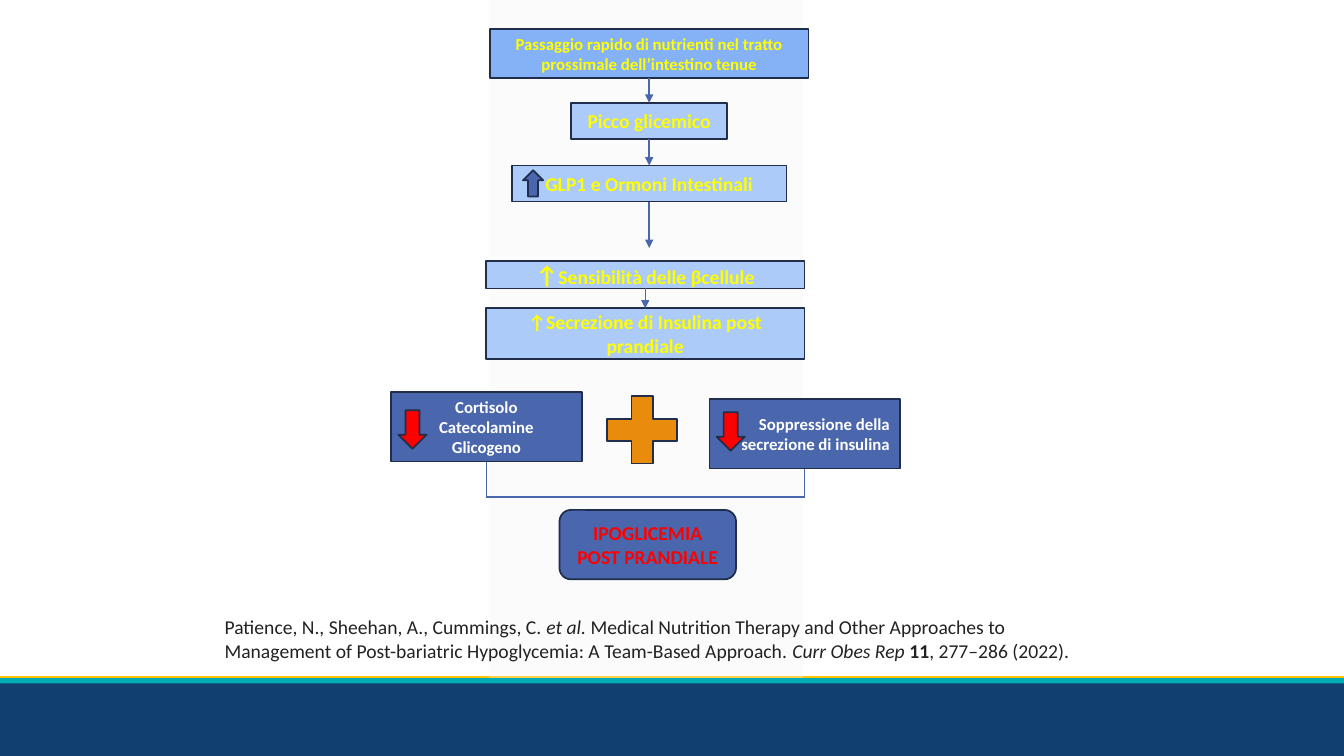
from lxml.etree import SubElement
from pptx import Presentation
from pptx.dml.color import RGBColor
from pptx.enum.shapes import MSO_CONNECTOR, MSO_SHAPE
from pptx.enum.text import MSO_ANCHOR, PP_ALIGN
from pptx.oxml.ns import qn
from pptx.util import Cm, Pt

NAVY = RGBColor(0x11, 0x3F, 0x6F)
TEAL = RGBColor(0x00, 0xAC, 0xB6)
GOLD = RGBColor(0xFF, 0xC0, 0x00)
PALE_GREY = RGBColor(0xF2, 0xF2, 0xF2)
SKY = RGBColor(0x85, 0xB2, 0xF6)
LIGHT_BLUE = RGBColor(0xAC, 0xCB, 0xF9)
BLUE = RGBColor(0x4A, 0x66, 0xAC)
OUTLINE = RGBColor(0x20, 0x2D, 0x4B)
ORANGE = RGBColor(0xE9, 0x8B, 0x0D)
RED = RGBColor(0xFF, 0x00, 0x00)
YELLOW = RGBColor(0xFF, 0xFF, 0x00)
WHITE = RGBColor(0xFF, 0xFF, 0xFF)
INK = RGBColor(0x22, 0x22, 0x22)

FONT = "Calibri"
SLIDE_WIDTH = 33.87
UPPER_CENTRE = 16.36  # axis of the first three steps
LOWER_CENTRE = 16.26  # axis of the insulin steps


def add_figure(page, kind, left, top, width, height, fill, outlined=True):
    figure = page.shapes.add_shape(kind, Cm(left), Cm(top), Cm(width), Cm(height))
    figure.shadow.inherit = False
    figure.fill.solid()
    figure.fill.fore_color.rgb = fill
    if outlined:
        figure.line.color.rgb = OUTLINE
        figure.line.width = Pt(1.25)
    else:
        figure.line.fill.background()
    return figure


def style_span(span, size, colour, bold=False, italic=False):
    span.font.name = FONT
    span.font.size = Pt(size)
    span.font.color.rgb = colour
    span.font.bold = bold
    span.font.italic = italic


def write_label(box, text, size, colour, align=PP_ALIGN.CENTER):
    frame = box.text_frame
    frame.word_wrap = True
    frame.vertical_anchor = MSO_ANCHOR.MIDDLE
    frame.text = text
    for paragraph in frame.paragraphs:
        paragraph.alignment = align
        for span in paragraph.runs:
            style_span(span, size, colour, bold=True)


def add_step(page, centre, top, width, height, text, size=14, fill=LIGHT_BLUE):
    box = add_figure(page, MSO_SHAPE.RECTANGLE, centre - width / 2, top, width, height, fill)
    write_label(box, text, size, YELLOW)
    return box


def add_effect(page, left, top, text, align, arrow_top):
    box = add_figure(page, MSO_SHAPE.RECTANGLE, left, top, 4.8, 1.75, BLUE)
    write_label(box, text, 12, WHITE, align)
    add_figure(page, MSO_SHAPE.DOWN_ARROW, left + 0.18, arrow_top, 0.71, 0.97, RED)
    return box


def add_line(page, x1, y1, x2, y2, arrow=False):
    line = page.shapes.add_connector(MSO_CONNECTOR.STRAIGHT, Cm(x1), Cm(y1), Cm(x2), Cm(y2))
    line.line.color.rgb = BLUE
    line.line.width = Pt(1)
    if arrow:
        SubElement(line.line._get_or_add_ln(), qn("a:tailEnd"), type="triangle")
    SubElement(line._element.spPr, qn("a:effectLst"))
    return line


def join_steps(page, upper, lower):
    arrow = add_line(page, 0, 0, 1, 1, arrow=True)
    arrow.begin_connect(upper, 2)
    arrow.end_connect(lower, 0)


def add_backdrop(page):
    bar = MSO_SHAPE.RECTANGLE
    add_figure(page, bar, 0, 17.04, SLIDE_WIDTH, 0.13, GOLD, outlined=False)
    add_figure(page, bar, 0, 17.15, SLIDE_WIDTH, 1.9, NAVY, outlined=False)
    column = add_figure(page, bar, 12.32, 0, 7.92, 17.15, PALE_GREY, outlined=False)
    colour = column.fill._xPr.find(qn("a:solidFill"))[0]
    SubElement(colour, qn("a:alpha"), val="30000")
    add_figure(page, bar, 0, 17.09, SLIDE_WIDTH, 0.13, TEAL, outlined=False)


def add_reference(page):
    box = page.shapes.add_textbox(Cm(5.41), Cm(15.37), Cm(21.95), Cm(1.45))
    box.text_frame.word_wrap = True
    paragraph = box.text_frame.paragraphs[0]
    for text, bold, italic in (
        ("Patience, N., Sheehan, A., Cummings, C. ", False, False),
        ("et al.", False, True),
        (" Medical Nutrition Therapy and Other Approaches to Management of "
         "Post-bariatric Hypoglycemia: A Team-Based Approach. ", False, False),
        ("Curr Obes Rep ", False, True),
        ("11", True, False),
        (", 277–286 (2022).", False, False),
    ):
        span = paragraph.add_run()
        span.text = text
        style_span(span, 14, INK, bold, italic)


def main():
    deck = Presentation()
    deck.slide_width, deck.slide_height = Cm(SLIDE_WIDTH), Cm(19.05)
    page = deck.slides.add_slide(deck.slide_layouts[6])
    add_backdrop(page)

    # Chain of steps
    passage = add_step(page, UPPER_CENTRE, 0.74, 8.03, 1.22,
                       "Passaggio rapido di nutrienti nel tratto prossimale dell’intestino tenue",
                       size=12, fill=SKY)
    peak = add_step(page, UPPER_CENTRE, 2.59, 3.94, 0.91, "Picco glicemico")
    hormones = add_step(page, UPPER_CENTRE, 4.17, 6.93, 0.91, "GLP1 e Ormoni Intestinali")
    add_figure(page, MSO_SHAPE.UP_ARROW, 13.18, 4.29, 0.51, 0.66, BLUE)
    sensitivity = add_step(page, LOWER_CENTRE, 6.58, 8.03, 0.69, "↑")
    span = sensitivity.text_frame.paragraphs[0].add_run()
    span.text = "Sensibilità delle βcellule"
    style_span(span, 14, YELLOW, bold=True)
    sensitivity.text_frame.paragraphs[0].runs[0].font.size = Pt(18)
    secretion = add_step(page, LOWER_CENTRE, 7.77, 8.03, 1.27,
                         "↑Secrezione di Insulina post prandiale")
    for upper, lower in ((passage, peak), (peak, hormones), (sensitivity, secretion)):
        join_steps(page, upper, lower)
    arrow = add_line(page, UPPER_CENTRE, 5.08, UPPER_CENTRE, 6.25, arrow=True)
    arrow.begin_connect(hormones, 2)

    # Combined effects, bracketed together
    cortisol = add_effect(page, 9.86, 9.88, "Cortisolo\nCatecolamine\nGlicogeno",
                          PP_ALIGN.CENTER, 10.34)
    suppression = add_effect(page, 17.88, 10.06, "Soppressione della secrezione di insulina",
                             PP_ALIGN.RIGHT, 10.39)
    add_figure(page, MSO_SHAPE.MATH_PLUS, 14.99, 9.68, 2.39, 2.31, ORANGE)
    bracket_left, bracket_right, bracket_bottom = 12.26, 20.28, 12.52
    for box, x in ((cortisol, bracket_left), (suppression, bracket_right)):
        add_line(page, x, 11.7, x, bracket_bottom).begin_connect(box, 2)
    add_line(page, bracket_left, bracket_bottom, bracket_right, bracket_bottom)

    # Outcome and reference
    outcome = add_figure(page, MSO_SHAPE.ROUNDED_RECTANGLE, 14.1, 12.85, 4.45, 1.75, BLUE)
    write_label(outcome, "IPOGLICEMIA POST PRANDIALE", 14, RED)
    add_reference(page)

    deck.save("out.pptx")


if __name__ == "__main__":
    main()
